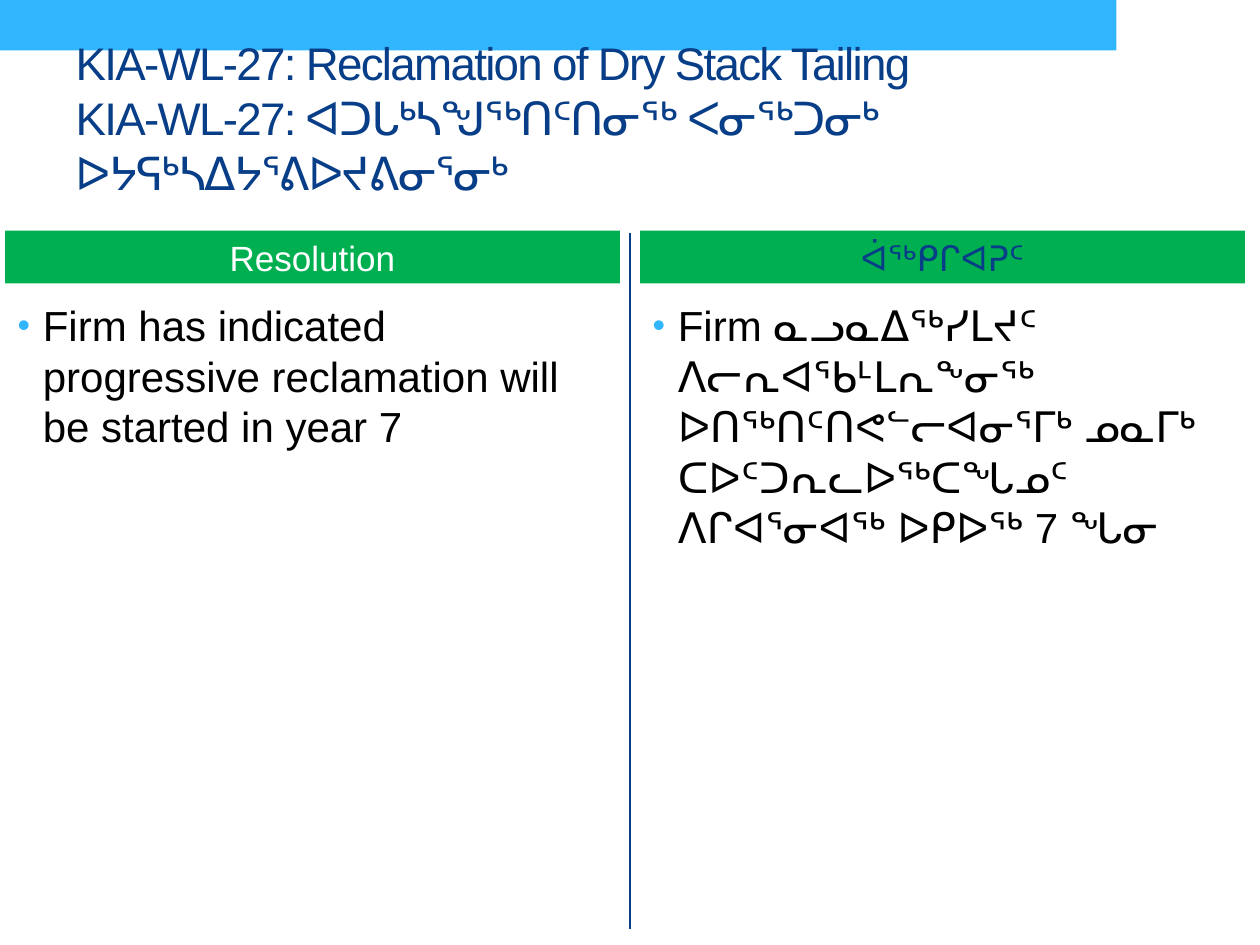
from lxml.etree import SubElement
from pptx import Presentation
from pptx.dml.color import RGBColor
from pptx.enum.shapes import MSO_CONNECTOR, MSO_SHAPE
from pptx.enum.text import MSO_ANCHOR, MSO_AUTO_SIZE, PP_ALIGN
from pptx.oxml.ns import qn
from pptx.util import Pt

# Content
TITLE = ("KIA-WL-27: Reclamation of Dry Stack Tailing\v"
         "KIA-WL-27: ᐊᑐᒐᒃᓴᖑᖅᑎᑦᑎᓂᖅ ᐸᓂᖅᑐᓂᒃ ᐅᔭᕋᒃᓴᐃᔭᕐᕕᐅᔪᕕᓂᕐᓂᒃ")
# left, width, heading, heading colour, body
COLUMNS = [
    (4, 488, "Resolution", "FFFFFF",
     "Firm has indicated progressive reclamation will be started in year 7"),
    (508, 480, "ᐋᖅᑭᒋᐊᕈᑦ", "073E87",
     "Firm ᓇᓗᓇᐃᖅᓯᒪᔪᑦ ᐱᓕᕆᐊᖃᒻᒪᕆᖕᓂᖅ ᐅᑎᖅᑎᑦᑎᕙᓪᓕᐊᓂᕐᒥᒃ ᓄᓇᒥᒃ "
     "ᑕᐅᑦᑐᕆᓚᐅᖅᑕᖓᓄᑦ ᐱᒋᐊᕐᓂᐊᖅ ᐅᑭᐅᖅ 7 ᖓᓂ"),
]
BLUE, NAVY, GREEN = "31B6FD", "073E87", "00B050"


def px(n):
    return n * 9144  # 100 px to the inch


def paint(fill, hue):
    fill.solid()
    fill.fore_color.rgb = RGBColor.from_string(hue)


def write(box, area, text, size, hue, anchor, align=PP_ALIGN.LEFT):
    box.left, box.top, box.width, box.height = map(px, area)
    frame = box.text_frame
    frame.text = text
    frame.word_wrap = True
    frame.auto_size = MSO_AUTO_SIZE.NONE
    frame.vertical_anchor = anchor
    para = frame.paragraphs[0]
    para.alignment = align
    para.space_before = Pt(0)
    return para


def style(para, size, hue):
    font = para.font
    font.name, font.size, font.bold = "Arial", Pt(size), False
    font.color.rgb = RGBColor.from_string(hue)


def bullet(para):
    props = para._p.get_or_add_pPr()
    props.set("marL", str(px(20)))
    props.set("indent", str(px(-20)))
    tint = SubElement(props, qn("a:buClr"))
    SubElement(tint, qn("a:srgbClr"), val=BLUE)
    SubElement(props, qn("a:buSzPct"), val="85000")
    SubElement(props, qn("a:buFont"), typeface="Arial")
    SubElement(props, qn("a:buChar"), char="•")


deck = Presentation()
deck.slide_width, deck.slide_height = px(1000), px(750)
slide = deck.slides.add_slide(deck.slide_layouts[4])
shapes = slide.shapes
title, *boxes = slide.placeholders

# Top band, with a white block at its right end, behind the text
for spot, (area, hue) in enumerate([((0, 0, 1000, 40), BLUE),
                                    ((886, 0, 114, 76), "FFFFFF")]):
    rect = shapes.add_shape(MSO_SHAPE.RECTANGLE, *map(px, area))
    rect.shadow.inherit = False
    rect.line.fill.background()
    paint(rect.fill, hue)
    shapes._spTree.insert(2 + spot, rect._element)

# Divider
line = shapes.add_connector(MSO_CONNECTOR.STRAIGHT,
                            px(500), px(185), px(500), px(737))
line.line.color.rgb = RGBColor.from_string(NAVY)
line.line.width = Pt(1.5)
SubElement(line._element.spPr, qn("a:effectLst"))

# Title, raised by a deep bottom margin
para = write(title, (50, 58, 900, 108), TITLE, 26.1, NAVY, MSO_ANCHOR.MIDDLE)
title.text_frame.margin_bottom = px(43)
style(para, 26.1, NAVY)
for run in para.runs:
    run._r.get_or_add_rPr().set("spc", "-100")

# Columns: a green heading over a bulleted body
for (left, wide, head, hue, text), top, body in zip(
        COLUMNS, boxes[::2], boxes[1::2]):
    para = write(top, (left, 183, wide, 42), head, 20, hue,
                 MSO_ANCHOR.MIDDLE, PP_ALIGN.CENTER)
    paint(top.fill, GREEN)
    style(para, 20, hue)
    para = write(body, (left, 233, wide, 504), text, 24, "000000",
                 MSO_ANCHOR.TOP)
    bullet(para)
    style(para, 24, "000000")

deck.save("out.pptx")
